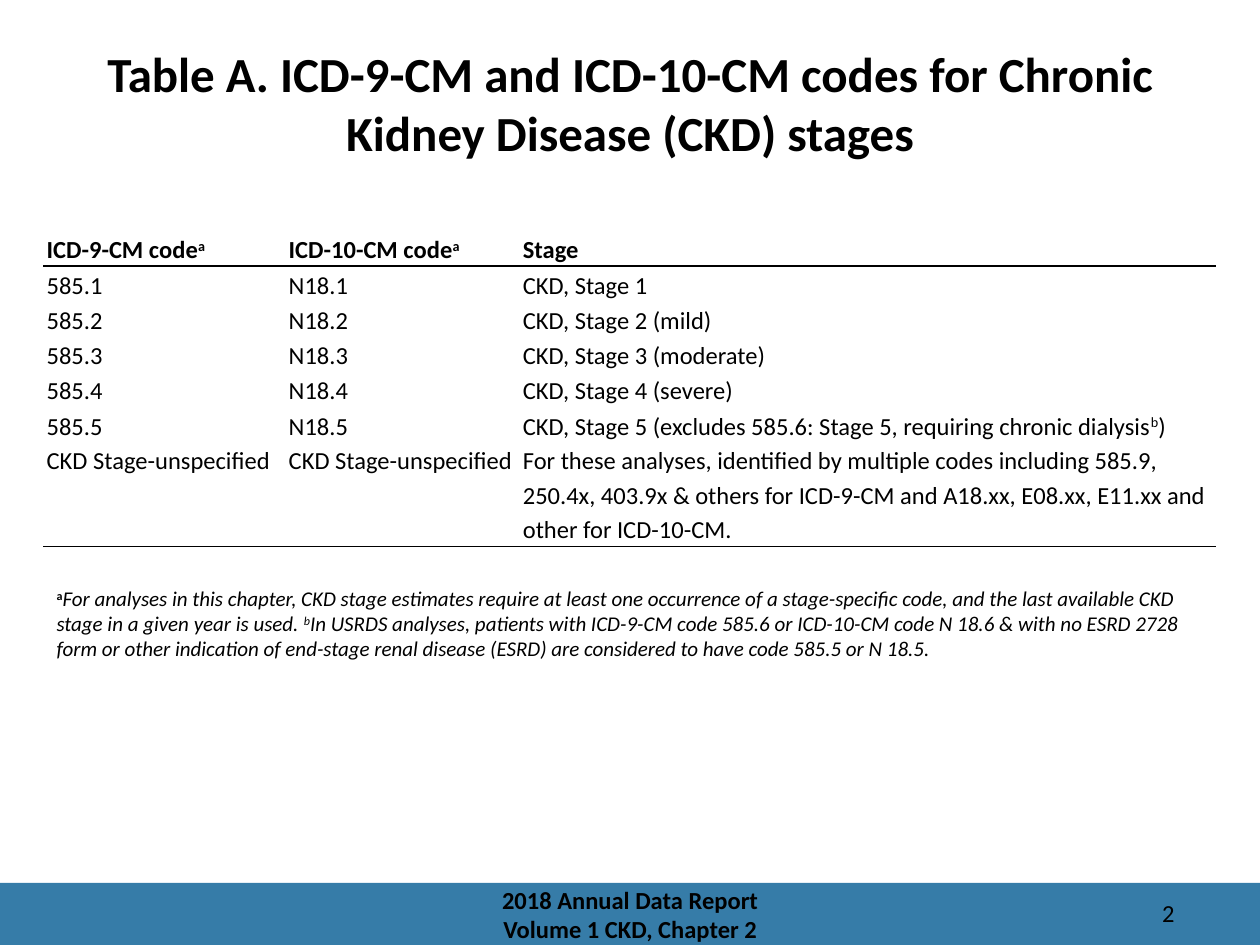
from lxml import etree
from pptx import Presentation
from pptx.dml.color import RGBColor
from pptx.enum.shapes import MSO_SHAPE
from pptx.enum.text import MSO_ANCHOR, PP_ALIGN
from pptx.oxml.ns import qn
from pptx.util import Cm, Pt

COLORS = {"text": "000000", "band": "367CA8", "rule": "000000"}
FONT = "Calibri"


def add_text(paragraph, text, size, bold=False, italic=False):
    for index, part in enumerate(text.split("^")):
        if not part:
            continue
        run = paragraph.add_run()
        run.text = part
        font = run.font
        font.name, font.size, font.bold, font.italic = FONT, Pt(size), bold, italic
        font.color.rgb = RGBColor.from_string(COLORS["text"])
        if index % 2:
            font._element.set("baseline", "30000")


def add_rule(cell, side):
    line = etree.SubElement(cell._tc.get_or_add_tcPr(), qn(f"a:{side}"), w=str(Pt(1)))
    fill = etree.SubElement(line, qn("a:solidFill"))
    etree.SubElement(fill, qn("a:srgbClr"), val=COLORS["rule"])


presentation = Presentation()
presentation.slide_width, presentation.slide_height = Cm(25.4), Cm(19.05)
slide = presentation.slides.add_slide(presentation.slide_layouts[6])

band = slide.shapes.add_shape(MSO_SHAPE.RECTANGLE, Cm(0), Cm(17.8), Cm(25.4), Cm(1.25))
band.shadow.inherit = False
band.fill.solid()
band.fill.fore_color.rgb = RGBColor.from_string(COLORS["band"])
band.line.fill.background()

text_boxes = [
    ((21.39, 17.98, 2.54, 0.76), ["2"], 14, False, PP_ALIGN.RIGHT, MSO_ANCHOR.TOP),
    ((1.27, 0.76, 22.86, 3.18),
     ["Table A. ICD-9-CM and ICD-10-CM codes for Chronic Kidney Disease (CKD) stages"],
     28, True, PP_ALIGN.CENTER, MSO_ANCHOR.TOP),
    ((8.41, 17.8, 8.59, 1.25), ["2018 Annual Data Report", "Volume 1 CKD, Chapter 2"],
     14, True, PP_ALIGN.CENTER, MSO_ANCHOR.MIDDLE),
]
for position, lines, size, bold, alignment, anchor in text_boxes:
    frame = slide.shapes.add_textbox(*map(Cm, position)).text_frame
    frame.word_wrap = True
    frame.vertical_anchor = anchor
    for index, line in enumerate(lines):
        paragraph = frame.add_paragraph() if index else frame.paragraphs[0]
        paragraph.alignment = alignment
        add_text(paragraph, line, size, bold)

footnote = slide.shapes.add_textbox(Cm(0.89), Cm(11.68), Cm(23.6), Cm(1.8)).text_frame
footnote.word_wrap = True
paragraph = footnote.paragraphs[0]
paragraph.space_after = Pt(18)
add_text(paragraph, "^a^", 12, bold=True)
add_text(
    paragraph,
    "For analyses in this chapter, CKD stage estimates require at least one occurrence of a "
    "stage-specific code, and the last available CKD stage in a given year is used. "
    "^b^In USRDS analyses, patients with ICD-9-CM code 585.6 or ICD-10-CM code N 18.6 & with "
    "no ESRD 2728 form or other indication of end-stage renal disease (ESRD) are considered "
    "to have code 585.5 or N 18.5.",
    12,
    italic=True,
)

stages = [
    "CKD, Stage 1",
    "CKD, Stage 2 (mild)",
    "CKD, Stage 3 (moderate)",
    "CKD, Stage 4 (severe)",
    "CKD, Stage 5 (excludes 585.6: Stage 5, requiring chronic dialysis^b^)",
]
rows = [
    ("ICD-9-CM code^a^", "ICD-10-CM code^a^", "Stage"),
    *((f"585.{number}", f"N18.{number}", stage) for number, stage in enumerate(stages, 1)),
    ("CKD Stage-unspecified", "CKD Stage-unspecified",
     "For these analyses, identified by multiple codes including 585.9, 250.4x, 403.9x & "
     "others for ICD-9-CM and A18.xx, E08.xx, E11.xx and other for ICD-10-CM."),
]
last = len(rows) - 1
rules = {0: "lnB", 1: "lnT", last: "lnB"}
table = slide.shapes.add_table(
    len(rows), 3, Cm(0.89), Cm(4.65), Cm(23.6), Cm(6.35)
).table
table.first_row = table.horz_banding = False
for column, width in zip(table.columns, (4.88, 4.72, 14)):
    column.width = Cm(width)
for row_index, texts in enumerate(rows):
    table.rows[row_index].height = Cm(2.11 if row_index == last else 0.71)
    for column_index, text in enumerate(texts):
        cell = table.cell(row_index, column_index)
        cell.margin_left = cell.margin_right = Cm(0.05)
        cell.margin_top = cell.margin_bottom = Cm(0)
        cell.vertical_anchor = MSO_ANCHOR.TOP if row_index == last else MSO_ANCHOR.MIDDLE
        if row_index in rules:
            add_rule(cell, rules[row_index])
        cell.fill.background()
        paragraph = cell.text_frame.paragraphs[0]
        paragraph.line_spacing = 1.15
        add_text(paragraph, text, 14, bold=row_index == 0)

presentation.save("out.pptx")
